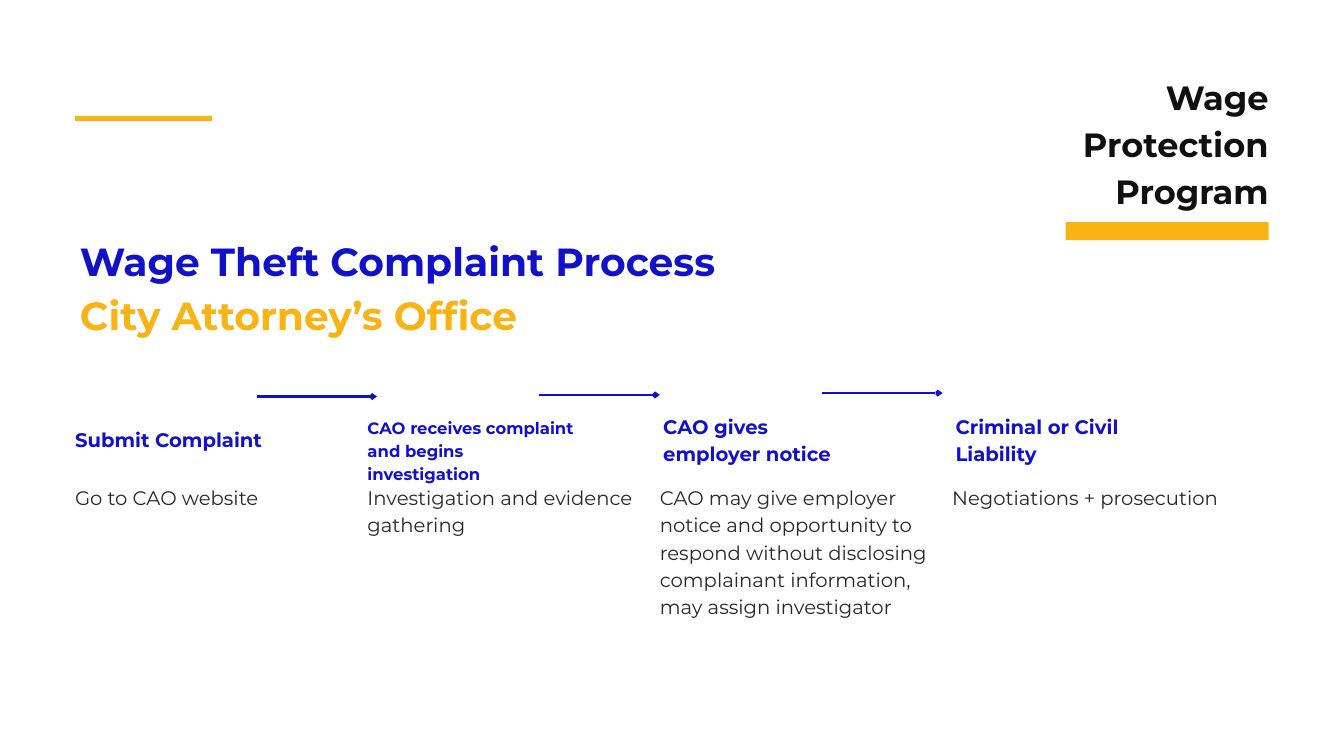
from dataclasses import dataclass

from lxml.etree import SubElement
from pptx import Presentation
from pptx.dml.color import RGBColor
from pptx.enum.shapes import MSO_CONNECTOR, MSO_SHAPE
from pptx.enum.text import MSO_ANCHOR, MSO_AUTO_SIZE, PP_ALIGN
from pptx.oxml.ns import qn
from pptx.slide import Slide
from pptx.util import Cm, Pt

COLUMN_LEFT, COLUMN_PITCH = 2.84, 11.05
ARROW_LEFT, ARROW_PITCH, ARROW_LENGTH = 9.7, 10.69, 4.55

# heading, heading top, heading width, heading indent, size, line spacing, description
STEPS = [
    ("Submit Complaint", 16.03, 7.16, 0, 21, 29.4, "Go to CAO website"),
    ("CAO receives complaint and begins investigation", 15.67, 7.8, 0, 17.6, 24.6,
     "Investigation and evidence gathering"),
    ("CAO gives employer notice", 15.52, 7.16, 0.13, 21, 29.4,
     "CAO may give employer notice and opportunity to respond without "
     "disclosing complainant information, may assign investigator"),
    ("Criminal or Civil Liability", 15.52, 7.16, 0.13, 21, 29.4,
     "Negotiations + prosecution"),
]
ARROW_TOPS = [14.99, 14.93, 14.86]


def color(hex_string):
    return RGBColor.from_string(hex_string)


@dataclass
class SlideBuilder:
    slide: Slide
    font: str = "Montserrat"
    blue: str = "1211CA"
    gold: str = "F9B314"
    dark: str = "2D262A"
    black: str = "101010"

    def set_text(self, shape, text, size, spacing, hex_color, bold=True, align=PP_ALIGN.LEFT):
        frame = shape.text_frame
        frame.word_wrap = True
        frame.auto_size = MSO_AUTO_SIZE.SHAPE_TO_FIT_TEXT
        frame.vertical_anchor = MSO_ANCHOR.TOP
        frame.margin_left = frame.margin_right = frame.margin_top = frame.margin_bottom = 0
        paragraph = frame.paragraphs[0]
        paragraph.alignment = align
        paragraph.line_spacing = Pt(spacing)
        paragraph.space_before = Pt(0)
        run = paragraph.add_run()
        run.text = text
        run.font.name = self.font
        run.font.size = Pt(size)
        run.font.bold = bold
        run.font.color.rgb = color(hex_color)

    def title(self, text, left, top, width, height, *style):
        shape = self.slide.shapes.title
        shape.left, shape.top = Cm(left), Cm(top)
        shape.width, shape.height = Cm(width), Cm(height)
        self.set_text(shape, text, *style)

    def text(self, text, left, top, width, height, *style, **options):
        shape = self.slide.shapes.add_textbox(Cm(left), Cm(top), Cm(width), Cm(height))
        self.set_text(shape, text, *style, **options)

    def bar(self, left, top, width, height):
        shape = self.slide.shapes.add_shape(
            MSO_SHAPE.RECTANGLE, Cm(left), Cm(top), Cm(width), Cm(height))
        shape.shadow.inherit = False
        shape.fill.solid()
        shape.fill.fore_color.rgb = color(self.gold)
        shape.line.fill.background()

    def arrow(self, left, top, length):
        connector = self.slide.shapes.add_connector(
            MSO_CONNECTOR.STRAIGHT, Cm(left), Cm(top), Cm(left + length), Cm(top))
        connector.line.color.rgb = color(self.blue)
        connector.line.width = Pt(3)
        properties = connector.element.spPr
        SubElement(properties.find(qn("a:ln")), qn("a:tailEnd"),
                   type="arrow", w="sm", len="sm")
        SubElement(properties, qn("a:effectLst"))


def main():
    presentation = Presentation()
    presentation.slide_width, presentation.slide_height = Cm(50.8), Cm(28.58)
    builder = SlideBuilder(presentation.slides.add_slide(presentation.slide_layouts[5]))

    builder.title("Wage Theft Complaint Process", 3.02, 9.37, 25.63, 1.47,
                  42, 39.5, builder.blue)
    builder.text("City Attorney’s Office", 3.02, 11.4, 17.9, 1.47, 42, 39.5, builder.gold)
    builder.text("Wage Protection Program", 38.25, 2.64, 9.7, 5.28,
                 36, 50.4, builder.black, align=PP_ALIGN.RIGHT)
    builder.bar(40.28, 8.4, 7.67, 0.68)
    builder.bar(COLUMN_LEFT, 4.38, 5.18, 0.19)

    for index, (heading, top, width, indent, size, spacing, description) in enumerate(STEPS):
        left = COLUMN_LEFT + index * COLUMN_PITCH
        builder.text(heading, left + indent, top, width, 1, size, spacing, builder.blue)
        builder.text(description, left, 18.21, 10.9, 1, 21, 29.4, builder.dark, bold=False)

    for index, top in enumerate(ARROW_TOPS):
        builder.arrow(ARROW_LEFT + index * ARROW_PITCH, top, ARROW_LENGTH)

    presentation.save("out.pptx")


if __name__ == "__main__":
    main()
